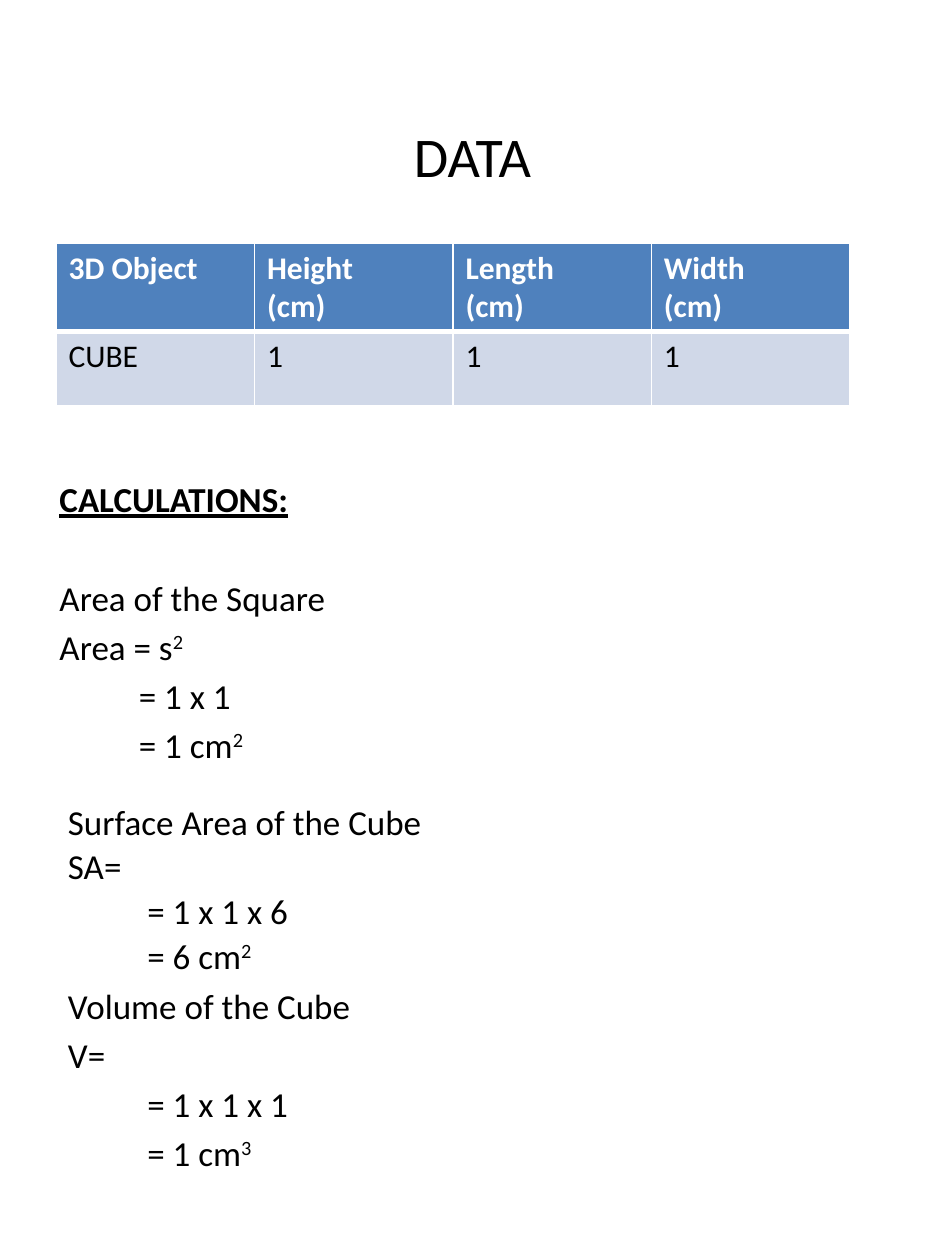
from lxml import etree
from pptx import Presentation
from pptx.dml.color import RGBColor
from pptx.enum import text as t
from pptx.oxml import ns
from pptx.util import Cm, Pt

BLACK = RGBColor(0x00, 0x00, 0x00)
WHITE = RGBColor(0xFF, 0xFF, 0xFF)
HEADER_BLUE = RGBColor(0x4F, 0x81, 0xBD)
ROW_BLUE = RGBColor(0xD0, 0xD8, 0xE8)
FONT = "Calibri"

TITLE = "DATA"
TABLE_ROWS = [
    ["3D Object", "Height\n(cm)", "Length\n(cm)", "Width\n(cm)"],
    ["CUBE", "1", "1", "1"],
]
ROW_HEIGHTS = [Cm(1.78), Cm(1.5)]
COLUMN_WIDTH = Cm(4)

# Each line: text, superscript, indented, line spacing
HEADING = "CALCULATIONS:"
SQUARE_LINES = [
    (HEADING, "", False, 1),
    ("Area of the Square", "", False, 1),
    ("Area = s", "2", False, 1),
    ("= 1 x 1", "", True, 1),
    ("= 1 cm", "2", True, 1),
]
CUBE_LINES = [
    ("Surface Area of the Cube", "", False, 0.9),
    ("SA=", "", False, 0.9),
    ("= 1 x 1 x 6", "", True, 0.9),
    ("= 6 cm", "2", True, 0.9),
    ("Volume of the Cube", "", False, 1),
    ("V=", "", False, 1),
    ("= 1 x 1 x 1", "", True, 1),
    ("= 1 cm", "3", True, 1),
]
LINE_GAP = Pt(4)
HEADING_GAP = Pt(32.4)
STEP_INDENT = Cm(1.6)


def style(run, size, color=BLACK, bold=False):
    run.font.name = FONT
    run.font.size = Pt(size)
    run.font.bold = bold
    run.font.color.rgb = color


def add_text_frame(slide, left, top, width, height):
    frame = slide.shapes.add_textbox(left, top, width, height).text_frame
    frame.word_wrap = True
    return frame


def add_calculations(slide, left, top, lines):
    frame = add_text_frame(slide, left, top, Cm(17.15), Cm(7.57))
    after_heading = False
    for index, (words, power, indented, spacing) in enumerate(lines):
        paragraph = frame.add_paragraph() if index else frame.paragraphs[0]
        paragraph.text = words
        paragraph.line_spacing = spacing
        paragraph.space_before = HEADING_GAP if after_heading else LINE_GAP
        if indented:
            paragraph._p.get_or_add_pPr().set("marL", str(STEP_INDENT))
        is_heading = words == HEADING
        style(paragraph.runs[0], 20, bold=is_heading)
        paragraph.runs[0].font.underline = is_heading
        if power:
            run = paragraph.add_run()
            run.text = power
            style(run, 20)
            run._r.get_or_add_rPr().set("baseline", "30000")
        after_heading = is_heading


def set_borders(cell, widths):
    """Give the cell white borders; widths maps each side tag to points."""
    properties = cell._tc.get_or_add_tcPr()
    for index, (side, width) in enumerate(widths.items()):
        line = etree.Element(ns.qn(f"a:{side}"), w=str(Pt(width)))
        fill = etree.SubElement(line, ns.qn("a:solidFill"))
        etree.SubElement(fill, ns.qn("a:srgbClr"), val=str(WHITE))
        properties.insert(index, line)


def add_data_table(slide):
    columns = len(TABLE_ROWS[0])
    table = slide.shapes.add_table(
        len(TABLE_ROWS), columns, Cm(1.13), Cm(4.9),
        COLUMN_WIDTH * columns, sum(ROW_HEIGHTS)).table
    for column in table.columns:
        column.width = COLUMN_WIDTH
    for row_index, row in enumerate(TABLE_ROWS):
        table.rows[row_index].height = ROW_HEIGHTS[row_index]
        header = row_index == 0
        for column_index, words in enumerate(row):
            cell = table.cell(row_index, column_index)
            cell.text_frame.text = words
            for paragraph in cell.text_frame.paragraphs:
                style(paragraph.runs[0], 18, WHITE if header else BLACK, header)
            cell.fill.solid()
            cell.fill.fore_color.rgb = HEADER_BLUE if header else ROW_BLUE
            set_borders(cell, {"lnL": 1, "lnR": 1,
                               "lnT": 1 if header else 3,
                               "lnB": 3 if header else 1})


def main():
    presentation = Presentation()
    presentation.slide_width, presentation.slide_height = Cm(19.05), Cm(25.4)
    slide = presentation.slides.add_slide(presentation.slide_layouts[6])

    title = add_text_frame(slide, Cm(0.95), Cm(1.02), Cm(17.15), Cm(4.23))
    title.vertical_anchor = t.MSO_ANCHOR.MIDDLE
    title.text = TITLE
    title.paragraphs[0].alignment = t.PP_ALIGN.CENTER
    style(title.paragraphs[0].runs[0], 32)

    add_calculations(slide, Cm(0.95), Cm(9.5), SQUARE_LINES)
    add_data_table(slide)
    add_calculations(slide, Cm(1.12), Cm(16.1), CUBE_LINES)
    presentation.save("out.pptx")


if __name__ == "__main__":
    main()
